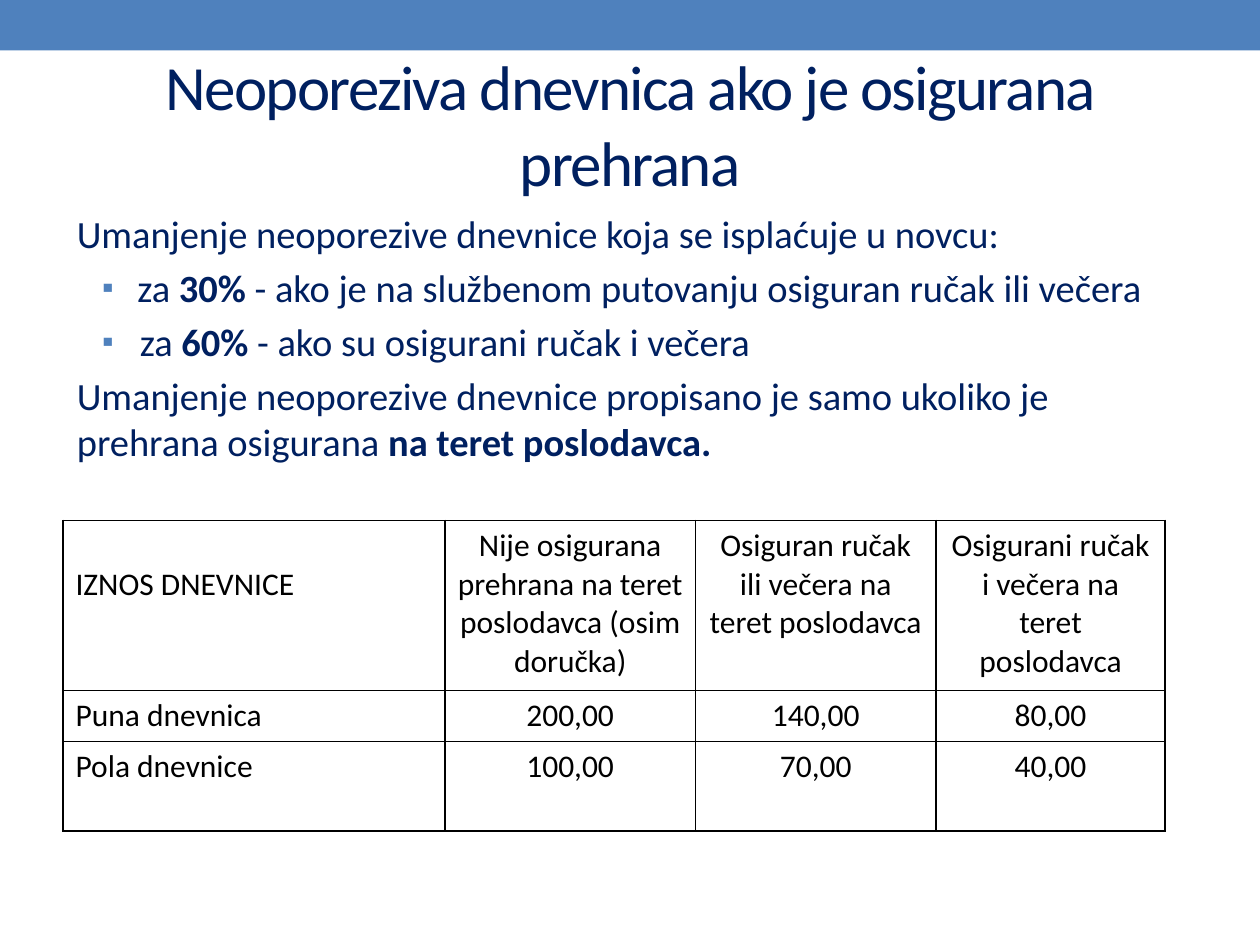
"""Build the slide on the untaxed daily allowance when meals are provided."""
import pptx
import pptx.dml.color
import pptx.enum.shapes
import pptx.enum.text
import pptx.oxml
import pptx.oxml.ns
import pptx.util

Cm = pptx.util.Cm
Pt = pptx.util.Pt
ALIGN = pptx.enum.text.PP_ALIGN
BLUE = pptx.dml.color.RGBColor(0x4F, 0x81, 0xBD)
NAVY = pptx.dml.color.RGBColor(0x00, 0x20, 0x60)
BLACK = pptx.dml.color.RGBColor(0, 0, 0)
SPACE = pptx.oxml.ns.nsdecls("a")


def add_run(para, text, color, **form):
    run = para.add_run()
    run.text = text
    run.font.color.rgb = color
    for key, value in {"name": "Calibri", "bold": False, **form}.items():
        setattr(run.font, key, value)
    return run


def add_xml(parent, *parts):
    for part in parts:
        tag, rest = part.split(" ", 1)
        parent.append(pptx.oxml.parse_xml(f"<a:{tag} {SPACE} {rest}"))


deck = pptx.Presentation()
deck.slide_width, deck.slide_height = Cm(25.4), Cm(19.05)
slide = deck.slides.add_slide(deck.slide_layouts[5])

bar = slide.shapes.add_shape(
    pptx.enum.shapes.MSO_SHAPE.RECTANGLE, 0, 0, deck.slide_width, Cm(1.02))
bar.shadow.inherit = False
bar.fill.solid()
bar.fill.fore_color.rgb = BLUE
bar.line.fill.background()

title = slide.shapes.title
place = {"left": Cm(1.27), "top": Cm(1.47), "width": Cm(22.86), "height": Cm(2.03)}
for key, value in place.items():
    setattr(title, key, value)
frame = title.text_frame
frame.auto_size = pptx.enum.text.MSO_AUTO_SIZE.NONE
frame.vertical_anchor = pptx.enum.text.MSO_ANCHOR.MIDDLE
head = frame.paragraphs[0]
head.alignment = ALIGN.CENTER
run = add_run(head, "Neoporeziva dnevnica ako je osigurana prehrana", NAVY, size=Pt(36))
run.font._element.set("spc", "-100")

lines = [
    (None, [("Umanjenje neoporezive dnevnice koja se isplaćuje u novcu:", False)]),
    ((1.22, 0.71), [("za ", False), ("30% ", True),
                    ("- ako je na službenom putovanju osiguran ručak ili večera", False)]),
    ((1.27, 0.76), [("za ", False), ("60% ", True),
                    ("- ako su osigurani ručak i večera", False)]),
    (None, [("Umanjenje neoporezive dnevnice propisano je samo ukoliko je "
             "prehrana osigurana ", False), ("na teret poslodavca.", True)]),
]
body = slide.shapes.add_textbox(Cm(1.3), Cm(4.11), Cm(22.86), Cm(13.67)).text_frame
body.word_wrap = True
for num, (dent, parts) in enumerate(lines):
    para = body.add_paragraph() if num else body.paragraphs[0]
    if dent:
        props = para._p.get_or_add_pPr()
        props.set("marL", str(Cm(dent[0])))
        props.set("indent", str(-Cm(dent[1])))
        add_xml(props, f'buClr ><a:srgbClr val="{BLUE}"/></a:buClr>',
                'buSzPct val="85000"/>', 'buFont typeface="Arial"/>', 'buChar char="▪"/>')
    if num:
        para.space_before = Pt(4.4)
    for text, bold in parts:
        add_run(para, text, NAVY, size=Pt(22), bold=bold)

rows = [
    ["IZNOS DNEVNICE", "Nije osigurana prehrana na teret poslodavca (osim doručka)",
     "Osiguran ručak ili večera na teret poslodavca",
     "Osigurani ručak i večera na teret poslodavca"],
    ["Puna dnevnica", "200,00", "140,00", "80,00"],
    ["Pola dnevnice", "100,00", "70,00", "40,00"],
]
wide = [7.7, 5.05, 4.85, 4.62]
high = [3.43, 1.03, 1.8]
table = slide.shapes.add_table(
    len(rows), len(wide), Cm(1.27), Cm(10.49), Cm(sum(wide)), Cm(sum(high))).table
table.first_row = table.horz_banding = False
for col, size in zip(table.columns, wide):
    col.width = Cm(size)
for row, size, texts in zip(table.rows, high, rows):
    row.height = Cm(size)
    for num, (cell, text) in enumerate(zip(row.cells, texts)):
        para = cell.text_frame.paragraphs[0]
        para.alignment = ALIGN.CENTER if num else ALIGN.LEFT
        add_run(para, text, BLACK, size=Pt(18))
        props = cell._tc.get_or_add_tcPr()
        add_xml(props, *(
            f'ln{side} w="{Pt(1)}"><a:solidFill><a:srgbClr val="{BLACK}"/></a:solidFill></a:ln{side}>'
            for side in "LRTB"))
        cell.fill.background()
table.cell(0, 0).margin_top = Cm(0.9)

deck.save("out.pptx")
